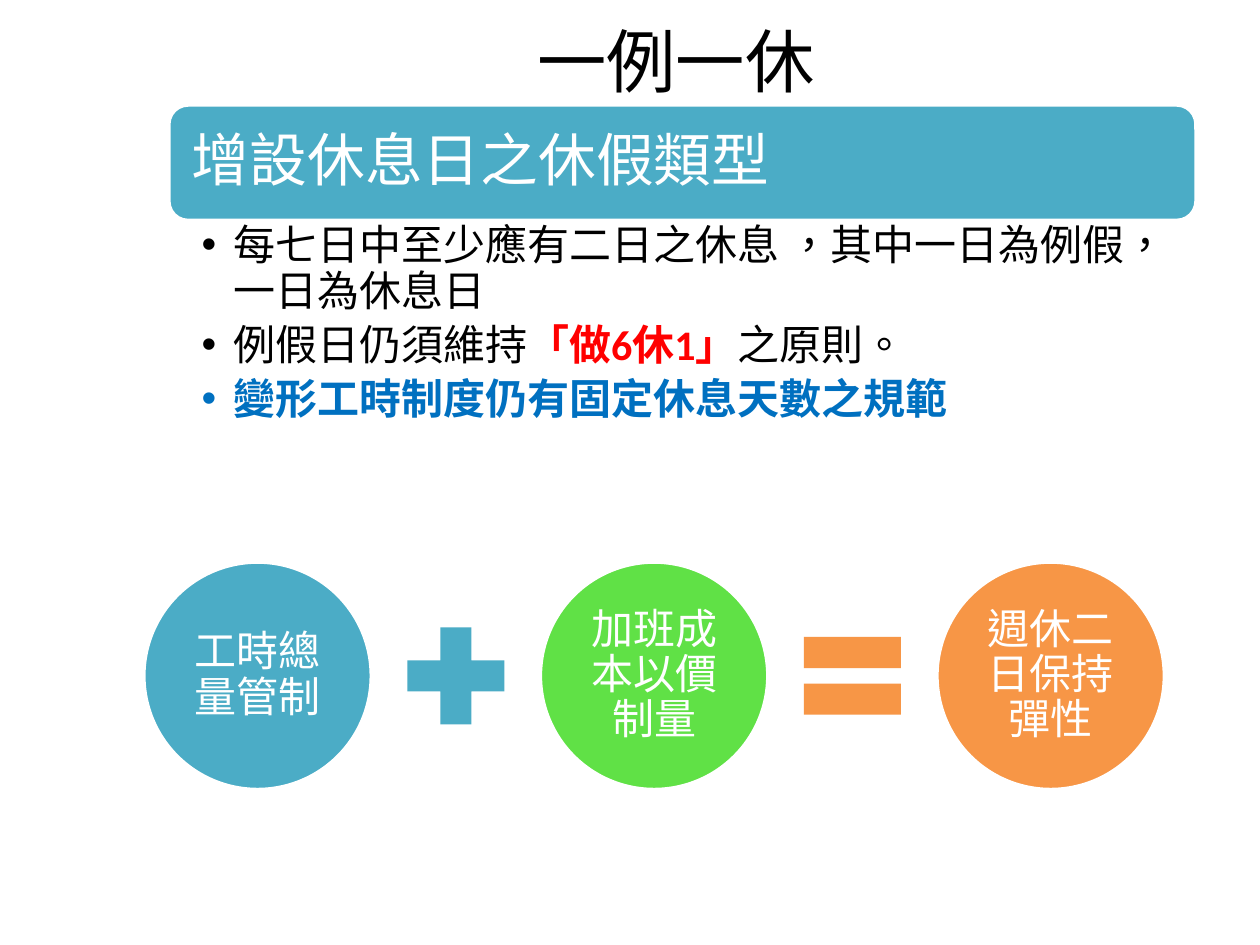
"""Build the slide on the one-fixed-day, one-flexible-day rest rule."""
from pptx import Presentation
from pptx.dml.color import RGBColor
from pptx.enum.lang import MSO_LANGUAGE_ID as LANG
from pptx.enum.shapes import MSO_SHAPE as SHAPE
from pptx.enum.text import MSO_ANCHOR as ANCHOR, MSO_AUTO_SIZE as AUTO, PP_ALIGN as ALIGN
from pptx.oxml.ns import qn
from pptx.util import Pt
from lxml.etree import SubElement

BLACK = RGBColor(0x00, 0x00, 0x00)
WHITE = RGBColor(0xFF, 0xFF, 0xFF)
TEAL = RGBColor(0x4B, 0xAC, 0xC6)
GREEN = RGBColor(0x60, 0xE1, 0x46)
ORANGE = RGBColor(0xF7, 0x96, 0x46)
RED = RGBColor(0xFF, 0x00, 0x00)
BLUE = RGBColor(0x00, 0x70, 0xC0)


class Deck:
    font = "Calibri"
    body_size = 24
    line_spacing = 0.9

    def __init__(self, width, height):
        self.prs = Presentation()
        self.prs.slide_width, self.prs.slide_height = Pt(width), Pt(height)
        self.s = self.prs.slides.add_slide(self.prs.slide_layouts[5])

    def run(self, p, text, size, color, bold=False):
        r = p.add_run()
        r.text = text
        f = r.font
        f.name, f.size, f.bold = self.font, Pt(size), bold
        f.color.rgb = color
        f.language_id = LANG.TRADITIONAL_CHINESE

    def frame(self, sp, anchor, left, top, right, bottom):
        tf = sp.text_frame
        tf.word_wrap, tf.auto_size, tf.vertical_anchor = True, AUTO.NONE, anchor
        tf.margin_left, tf.margin_top = Pt(left), Pt(top)
        tf.margin_right, tf.margin_bottom = Pt(right), Pt(bottom)
        return tf

    def title(self, text, box, size):
        sp = self.s.shapes.title
        sp.left, sp.top, sp.width, sp.height = map(Pt, box)
        p = self.frame(sp, ANCHOR.MIDDLE, 7.2, 3.6, 7.2, 3.6).paragraphs[0]
        p.alignment = ALIGN.CENTER
        self.run(p, text, size, BLACK)

    def shape(self, kind, box, fill, outlined=False):
        sp = self.s.shapes.add_shape(kind, *map(Pt, box))
        sp.shadow.inherit = False
        sp.fill.solid()
        sp.fill.fore_color.rgb = fill
        if outlined:
            sp.line.color.rgb, sp.line.width = WHITE, Pt(2)
        else:
            sp.line.fill.background()
        return sp

    def label(self, kind, box, fill, text, size, inset, align):
        sp = self.shape(kind, box, fill, outlined=True)
        p = self.frame(sp, ANCHOR.MIDDLE, *[inset] * 4).paragraphs[0]
        p.alignment, p.line_spacing = align, self.line_spacing
        self.run(p, text, size, WHITE)

    def bullets(self, box, items):
        sp = self.s.shapes.add_textbox(*map(Pt, box))
        tf = self.frame(sp, ANCHOR.TOP, 18.7, 2.2, 13.7, 2.2)
        for i, runs in enumerate(items):
            p = tf.add_paragraph() if i else tf.paragraphs[0]
            p.level, p.line_spacing, p.space_after = 1, self.line_spacing, Pt(5)
            pPr = p._p.get_or_add_pPr()
            pPr.set("marL", str(Pt(18)))
            pPr.set("indent", str(Pt(-18)))
            SubElement(pPr, qn("a:buFont"), typeface="Arial")
            SubElement(pPr, qn("a:buChar"), char="•")
            for text, color, bold in runs:
                self.run(p, text, self.body_size, color, bold)


def main():
    deck = Deck(720, 540)
    deck.title("一例一休", (100, 8, 572.5, 52), 39.6)
    deck.label(SHAPE.ROUNDED_RECTANGLE, (96.5, 60, 587, 66), TEAL,
               "增設休息日之休假類型", 33, 10, ALIGN.LEFT)
    deck.bullets((96.5, 126, 587, 150.5), [
        [("每七日中至少應有二日之休息 ，其中一日為例假，一日為休息日", BLACK, False)],
        [("例假日仍須維持", BLACK, False), ("「做6休1」", RED, True),
         ("之原則。", BLACK, False)],
        [("變形工時制度仍有固定休息天數之規範", BLUE, True)],
    ])

    left, middle, circle, sign, pitch = 82.2, 386.2, 130, 75.5, 226.6
    terms = [("工時總量管制", TEAL), ("加班成本以價制量", GREEN), ("週休二日保持彈性", ORANGE)]
    for i, (text, fill) in enumerate(terms):
        deck.label(SHAPE.OVAL, (left + i * pitch, middle - circle / 2, circle, circle),
                   fill, text, deck.body_size, 2, ALIGN.CENTER)
    signs = [(SHAPE.MATH_PLUS, TEAL), (SHAPE.MATH_EQUAL, ORANGE)]
    for i, (kind, fill) in enumerate(signs):
        x = left + i * pitch + (circle + pitch - sign) / 2
        deck.shape(kind, (x, middle - sign / 2, sign, sign), fill)
    deck.prs.save("out.pptx")


if __name__ == "__main__":
    main()
